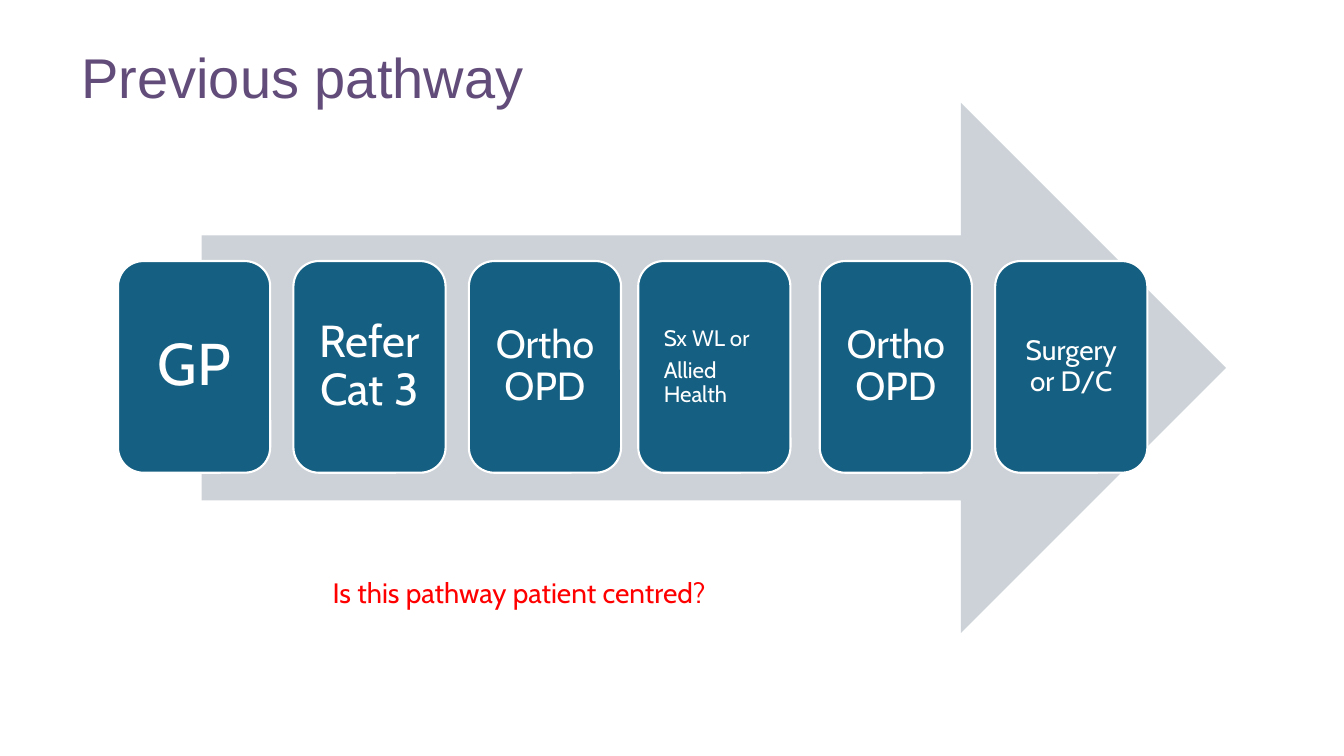
from pptx import Presentation
from pptx.dml.color import RGBColor
from pptx.enum.shapes import MSO_SHAPE
from pptx.enum.text import MSO_ANCHOR, PP_ALIGN
from pptx.util import Inches, Pt

WHITE = RGBColor(0xFF, 0xFF, 0xFF)
BLUE = RGBColor(0x15, 0x60, 0x82)
GREY = RGBColor(0xCC, 0xD2, 0xD8)
PURPLE = RGBColor(0x62, 0x4C, 0x79)
RED = RGBColor(0xFF, 0x00, 0x00)

RIGHT_ARROW = MSO_SHAPE.RIGHT_ARROW
ROUNDED = MSO_SHAPE.ROUNDED_RECTANGLE
MIDDLE, BOTTOM = MSO_ANCHOR.MIDDLE, MSO_ANCHOR.BOTTOM
LEFT, CENTER = PP_ALIGN.LEFT, PP_ALIGN.CENTER

STEP_LEFT, STEP_PITCH = 1.17, 1.74
STEPS = [
    ("GP", 42, CENTER, 0.18, 0),
    ("Refer Cat 3", 32, CENTER, 0.14, 0),
    ("Ortho OPD", 28, CENTER, 0.14, 0),
    ("Sx WL or\nAllied Health", 16, LEFT, 0.18, -0.06),
    ("Ortho OPD", 28, CENTER, 0.18, 0),
    ("Surgery or D/C", 20, CENTER, 0.18, 0),
]


class PathwaySlide:
    body_font = "Cabin"
    title_font = "Arial"

    def __init__(self, prs):
        self.s = prs.slides.add_slide(prs.slide_layouts[6])

    def fill_text(self, tf, text, size, color, font, align=LEFT, spacing=1.0, after=0):
        tf.word_wrap = True
        tf.text = text
        for p in tf.paragraphs:
            p.alignment = align
            p.line_spacing = spacing
            p.space_after = Pt(after)
            for r in p.runs:
                r.font.size = Pt(size)
                r.font.name = font
                r.font.color.rgb = color

    def shape(self, kind, box, fill):
        sp = self.s.shapes.add_shape(kind, *map(Inches, box))
        sp.shadow.inherit = False
        sp.fill.solid()
        sp.fill.fore_color.rgb = fill
        sp.line.fill.background()
        return sp

    def arrow(self, box):
        self.shape(RIGHT_ARROW, box, GREY)

    def step(self, left, text, size, align, inset):
        sp = self.shape(ROUNDED, (left, 2.59, 1.51, 2.1), BLUE)
        sp.line.color.rgb = WHITE
        sp.line.width = Pt(1.5)
        tf = sp.text_frame
        tf.vertical_anchor = MIDDLE
        tf.margin_left = tf.margin_right = Inches(inset)
        tf.margin_top = tf.margin_bottom = Inches(inset)
        self.fill_text(tf, text, size, WHITE, self.body_font, align, 0.9, 0.35 * size)

    def text(self, box, text, size, color, font, anchor, spacing=1.0):
        tf = self.s.shapes.add_textbox(*map(Inches, box)).text_frame
        tf.vertical_anchor = anchor
        self.fill_text(tf, text, size, color, font, spacing=spacing)


def main():
    prs = Presentation()
    prs.slide_width, prs.slide_height = Inches(13.33), Inches(7.5)
    slide = PathwaySlide(prs)
    slide.arrow((2, 1.02, 10.16, 5.26))
    for i, (text, size, align, inset, shift) in enumerate(STEPS):
        slide.step(STEP_LEFT + i * STEP_PITCH + shift, text, size, align, inset)
    slide.text((0.71, 0.38, 12.44, 0.77), "Previous pathway", 40, PURPLE,
               slide.title_font, BOTTOM, 0.9)
    slide.text((3.2, 5.32, 6.59, 1.11), "Is this pathway patient centred?", 20, RED,
               slide.body_font, MIDDLE)
    prs.save("out.pptx")


if __name__ == "__main__":
    main()
